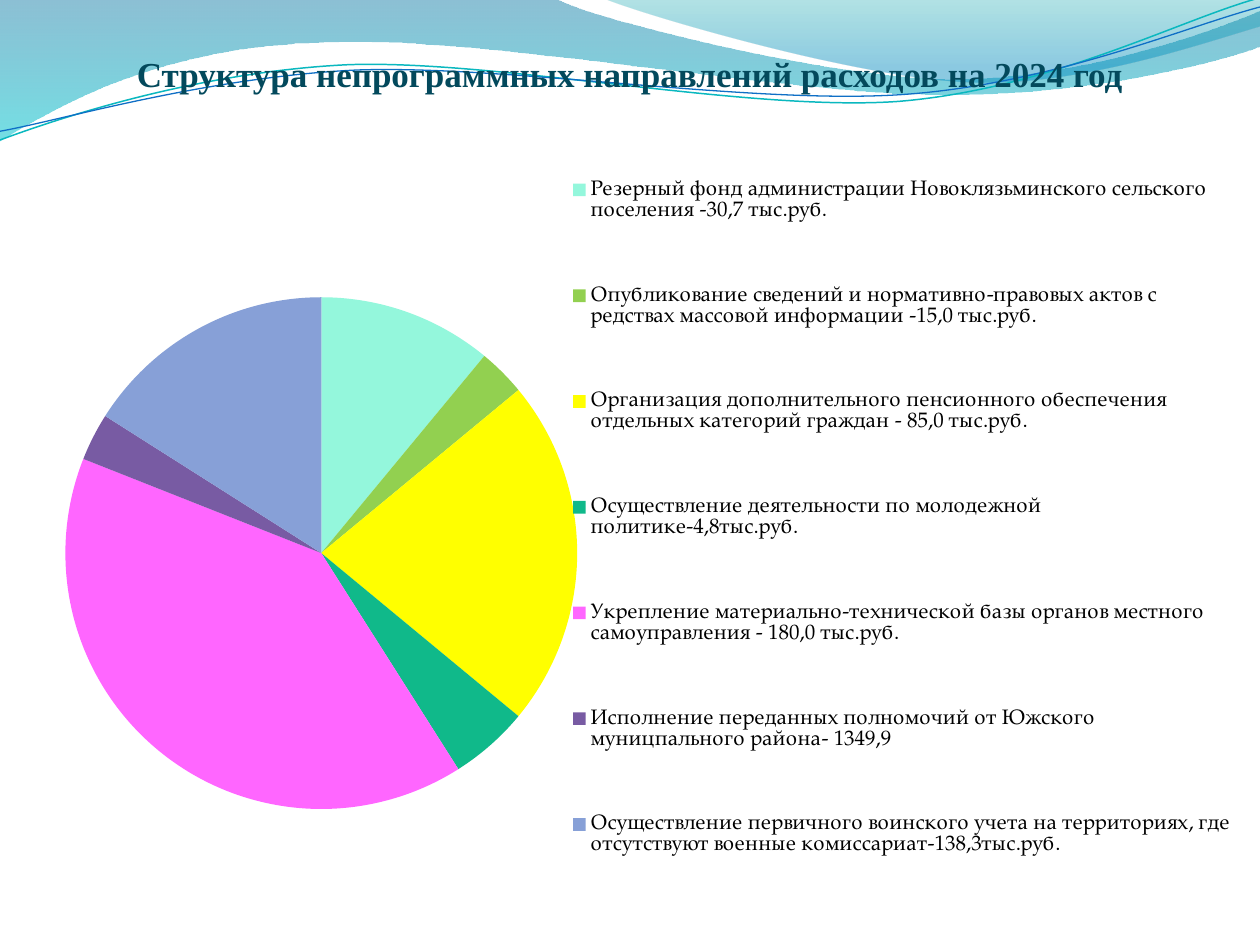
from lxml import etree
from pptx import Presentation
from pptx.chart.data import CategoryChartData
from pptx.dml.color import RGBColor
from pptx.enum.chart import XL_CHART_TYPE, XL_LEGEND_POSITION
from pptx.enum.text import MSO_ANCHOR, PP_ALIGN
from pptx.oxml import parse_xml
from pptx.oxml.ns import nsdecls, qn
from pptx.util import Pt

PIE = XL_CHART_TYPE.PIE
LEGEND_RIGHT = XL_LEGEND_POSITION.RIGHT
TOP = MSO_ANCHOR.TOP
CENTER = PP_ALIGN.CENTER

# Legend label, share in percent, slice colour
EXPENSES = [
    ("Резерный фонд администрации Новоклязьминского сельского поселения -30,7 тыс.руб.", 11, "94F7DC"),
    ("Опубликование сведений и нормативно-правовых актов с редствах массовой информации -15,0 тыс.руб.", 3, "92D050"),
    ("Организация дополнительного пенсионного обеспечения отдельных категорий граждан - 85,0 тыс.руб.", 22, "FFFF00"),
    ("Осуществление деятельности по молодежной политике-4,8тыс.руб.", 5, "10B98A"),
    ("Укрепление материально-технической базы органов местного самоуправления - 180,0 тыс.руб.", 40, "FF66FF"),
    ("Исполнение переданных полномочий от Южского муницпального района- 1349,9", 3, "785BA3"),
    ("Осуществление первичного воинского учета на территориях, где отсутствуют военные комиссариат-138,3тыс.руб.",
     16, "87A0D7"),
]

# Each outline: a start point, then line ends (2 numbers) or cubic curves (6)
WIDE_WAVE = [(0, 0), (317, -1), (343, 12, 478, 45, 546, 45), (614, 45, 690, 19, 720, 6),
             (721, 26), (708, 32, 626, 55, 537, 54), (447, 54, 275, 20, 185, 24),
             (93, 26, 33, 60, -1, 81)]
RIGHT_WAVE = [(345, -1), (366, 8, 491, 45, 554, 47), (616, 50, 692, 23, 720, 15), (720, 0)]
TEAL_LINE = [(0, 80), (35, 67, 114, 41, 199, 37), (284, 34, 427, 64, 513, 58),
             (600, 51, 675, 11, 719, -1)]
BLUE_LINE = [(0, 75), (34, 69, 118, 44, 204, 40), (290, 37, 430, 60, 516, 54),
             (602, 48, 678, 15, 720, 4)]


def color(hex_code):
    return RGBColor.from_string(hex_code)


class WaveSlide:
    title_font = "Times New Roman"
    chart_font = "TeX Gyre Pagella"
    title_color = "03495C"
    text_color = "000000"

    def __init__(self, presentation):
        self.slide = presentation.slides.add_slide(presentation.slide_layouts[6])

    def outline(self, steps, closed):
        """Freeform through the step ends, with its curved steps bent."""
        ends = [(Pt(step[-2]), Pt(step[-1])) for step in steps]
        builder = self.slide.shapes.build_freeform(*ends[0])
        builder.add_line_segments(ends[1:], close=closed)
        shape = builder.convert_to_shape()
        shape.shadow.inherit = False
        segments = list(shape._element.iter(qn("a:lnTo")))
        for segment, step in zip(segments, steps[1:]):
            if len(step) == 6:
                segment.tag = qn("a:cubicBezTo")
                segment.remove(segment[0])
                for x, y in zip(step[::2], step[1::2]):
                    point = etree.SubElement(segment, qn("a:pt"))
                    point.set("x", str(Pt(x) - shape.left))
                    point.set("y", str(Pt(y) - shape.top))
        return shape

    def wave(self, steps, stops):
        """Filled wave; stops are (position, colour, opacity in percent)."""
        shape = self.outline(steps, True)
        shape.line.fill.background()
        shape.fill.gradient()
        shape.fill.gradient_angle = 270
        for stop, (position, hex_code, _) in zip(shape.fill.gradient_stops, stops):
            stop.position = position
            stop.color.rgb = color(hex_code)
        stop_colors = list(shape._element.spPr.iter(qn("a:srgbClr")))
        for element, (_, _, opacity) in zip(stop_colors, stops):
            etree.SubElement(element, qn("a:alpha")).set("val", str(opacity * 1000))

    def curve(self, steps, hex_code, width):
        shape = self.outline(steps, False)
        shape.fill.background()
        shape.line.color.rgb = color(hex_code)
        shape.line.width = Pt(width)

    def title(self, text, left, top, width, height):
        frame = self.slide.shapes.add_textbox(Pt(left), Pt(top), Pt(width), Pt(height)).text_frame
        frame.word_wrap = True
        frame.vertical_anchor = TOP
        frame.margin_left = frame.margin_right = frame.margin_bottom = 0
        frame.margin_top = Pt(3.6)
        paragraph = frame.paragraphs[0]
        paragraph.alignment = CENTER
        run = paragraph.add_run()
        run.text = text
        run.font.name = self.title_font
        run.font.size = Pt(20)
        run.font.bold = True
        run.font.color.rgb = color(self.title_color)

    def font(self, font, size):
        font.name = self.chart_font
        font.size = Pt(size)
        font.color.rgb = color(self.text_color)

    def layout(self, x, y, w, h, inner=False):
        """Manual place inside the chart, in percent of its size."""
        target = '<c:layoutTarget val="inner"/>' if inner else ""
        return parse_xml(
            f'<c:layout {nsdecls("c")}><c:manualLayout>{target}'
            '<c:xMode val="edge"/><c:yMode val="edge"/>'
            f'<c:x val="{x / 100}"/><c:y val="{y / 100}"/>'
            f'<c:w val="{w / 100}"/><c:h val="{h / 100}"/>'
            '</c:manualLayout></c:layout>')

    def pie(self, expenses, left, top, width, height):
        data = CategoryChartData()
        data.categories = [label for label, _, _ in expenses]
        data.add_series("Series 1", [share for _, share, _ in expenses])
        chart = self.slide.shapes.add_chart(
            PIE, Pt(left), Pt(top), Pt(width), Pt(height), data).chart
        chart.has_title = False
        self.font(chart.font, 18)

        plot = chart.plots[0]
        plot.vary_by_categories = True
        for i, (_, _, hex_code) in enumerate(expenses):
            fill = plot.series[0].points[i].format.fill
            fill.solid()
            fill.fore_color.rgb = color(hex_code)

        chart.has_legend = True
        legend = chart.legend
        legend.position = LEGEND_RIGHT
        legend.include_in_layout = False
        self.font(legend.font, 12)

        # Fixed places for the pie and the legend
        plot_area = chart._chartSpace.chart.plotArea
        legend_xml = legend._element
        for parent in (plot_area, legend_xml):
            for old in parent.findall(qn("c:layout")):
                parent.remove(old)
        plot_area.insert(0, self.layout(0.2, 12.2, 43.3, 81.1, inner=True))
        legend_xml.find(qn("c:legendPos")).addnext(self.layout(42.5, 0, 57, 97))


def main():
    presentation = Presentation()
    presentation.slide_width = Pt(720)
    presentation.slide_height = Pt(540)
    page = WaveSlide(presentation)

    # Waves along the top edge
    page.wave(WIDE_WAVE, [(0, "0074A1", 45), (1, "00C6CF", 55)])
    page.wave(RIGHT_WAVE, [(0, "00A1A9", 30), (0.8, "008BBF", 45)])
    page.curve(TEAL_LINE, "0AB8BF", 0.85)
    page.curve(BLUE_LINE, "0F6FC6", 0.75)

    # Title and expense structure
    page.title("Структура непрограммных направлений расходов на 2024 год", 36, 26.2, 648, 85)
    page.pie(EXPENSES, 36, 66.2, 675.4, 473.8)

    presentation.save("out.pptx")


if __name__ == "__main__":
    main()
